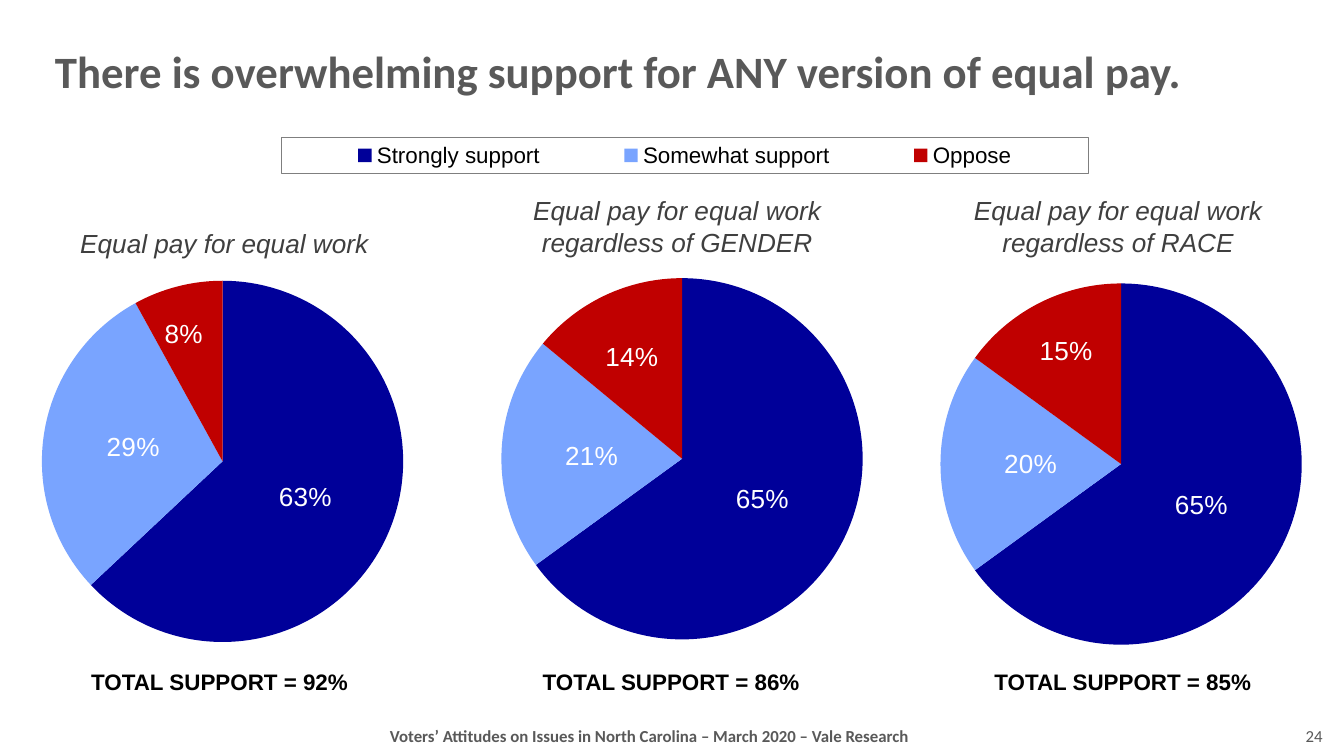
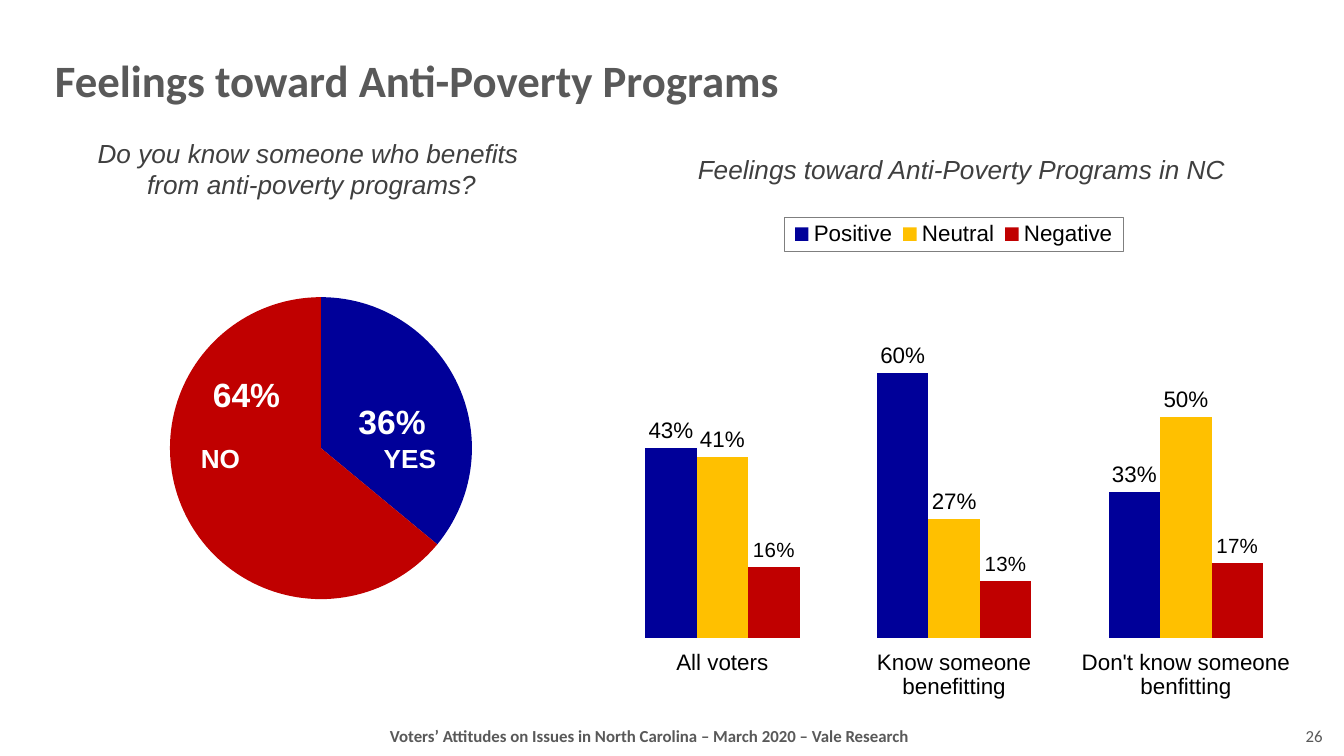
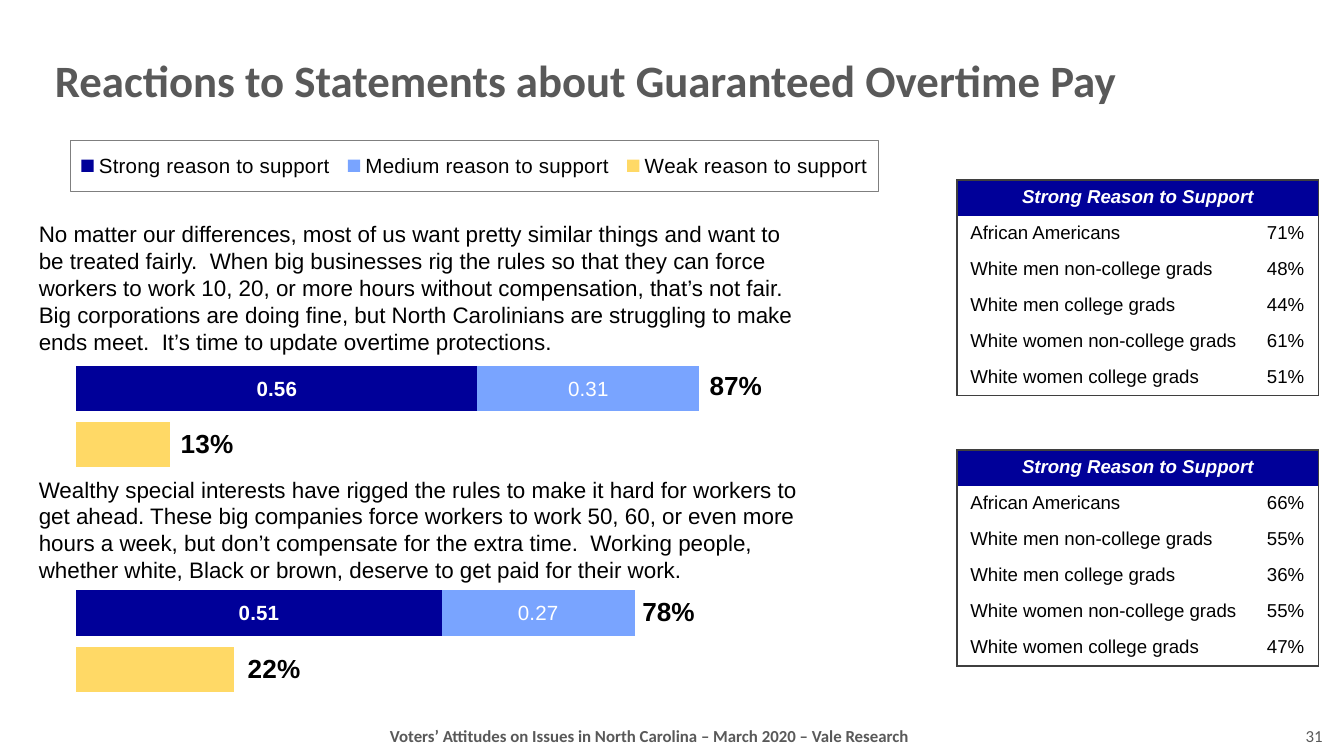
from copy import deepcopy
from dataclasses import dataclass, field

from lxml import etree
from pptx import Presentation
from pptx import util as u
from pptx.chart.data import CategoryChartData
from pptx.dml.color import RGBColor
from pptx.enum import chart as ch
from pptx.enum import text
from pptx.oxml import parse_xml
from pptx.oxml.ns import nsdecls, qn

NAVY = RGBColor(0x00, 0x00, 0x99)
SKY = RGBColor(0x79, 0xA4, 0xFF)
RED = RGBColor(0xC0, 0x00, 0x00)
GOLD = RGBColor(0xFF, 0xC0, 0x00)
PALE_GOLD = RGBColor(0xFF, 0xD9, 0x66)
GREY = RGBColor(0x59, 0x59, 0x59)
DARK = RGBColor(0x3F, 0x3F, 0x3F)
BLACK = RGBColor(0x00, 0x00, 0x00)
WHITE = RGBColor(0xFF, 0xFF, 0xFF)

CENTER, LEFT, RIGHT = text.PP_ALIGN.CENTER, text.PP_ALIGN.LEFT, text.PP_ALIGN.RIGHT
FOOTER = "Voters’ Attitudes on Issues in North Carolina – March 2020 – Vale Research"
PLAIN_TABLE = "{2D5ABB26-0587-4C30-8999-92F81FD0307C}"
Box = tuple[float, float, float, float]


@dataclass
class Pie:
    box: Box
    plot: Box  # fractions of the chart
    names: list[str]
    values: list[float | None]
    colors: list[RGBColor]
    size: int = 14
    bold: bool = False
    shifts: dict[int, tuple[float, float]] = field(default_factory=dict)


@dataclass
class Bars:
    name: str
    values: list[float | None]
    color: RGBColor
    size: int
    label_color: RGBColor = BLACK
    bold: bool = False
    fmt: str = "0%"


@dataclass
class Statement:
    words: str
    top: float
    height: float
    total: str
    total_at: tuple[float, float]
    table_top: float
    shares: list[str]


# Text
def style(font, size: float, color: RGBColor, bold=False, italic=False, name="Arial") -> None:
    font.name, font.size, font.bold, font.italic = name, u.Pt(size), bold, italic
    font.color.rgb = color


def fill_paragraph(p, words: str, align=LEFT, **fmt) -> None:
    p.text, p.alignment = words, align
    for r in p.runs:
        style(r.font, **fmt)
    for br in p._p.findall(qn("a:br")):
        br.insert(0, deepcopy(p.runs[0]._r.rPr))


def add_text(s, words: str, box: Box, wrap=True, middle=False, spacing=None, **fmt) -> None:
    tf = s.shapes.add_textbox(*map(u.Inches, box)).text_frame
    tf.word_wrap = wrap
    if middle:
        tf.vertical_anchor = text.MSO_ANCHOR.MIDDLE
    p = tf.paragraphs[0]
    fill_paragraph(p, words, **fmt)
    if spacing:
        p.line_spacing = spacing


def add_caption(s, words: str, box: Box) -> None:
    add_text(s, words, box, wrap=False, align=CENTER, size=14, color=DARK, italic=True)


def add_bold(s, words: str, box: Box, size=14, color=BLACK) -> None:
    add_text(s, words, box, wrap=False, align=CENTER, size=size, color=color, bold=True)


def new_slide(prs, title: str, number: int, title_top=0.16):
    s = prs.slides.add_slide(prs.slide_layouts[6])
    add_text(s, FOOTER, (1.84, 5.35, 5.98, 0.25), align=CENTER,
             size=9, color=GREY, bold=True, name="Calibri")
    add_text(s, title, (0.31, title_top, 8.89, 0.94), middle=True, spacing=0.8,
             size=24, color=GREY, bold=True, name="Calibri")
    add_text(s, str(number), (9.3, 5.35, 0.64, 0.25), align=RIGHT,
             size=9, color=GREY, name="Calibri")
    return s


# Charts
def set_layout(parent, index: int, x: float, y: float, size=None, inner=False) -> None:
    """Place a chart part; without a size, x and y shift it from its usual place."""
    for old in parent.findall(qn("c:layout")):
        parent.remove(old)
    layout = parse_xml(f"<c:layout {nsdecls('c')}><c:manualLayout/></c:layout>")
    values = {"layoutTarget": "inner"} if inner else {}
    if size:
        values |= {"xMode": "edge", "yMode": "edge"}
    values |= {"x": x, "y": y}
    if size:
        values |= {"w": size[0], "h": size[1]}
    for tag, value in values.items():
        etree.SubElement(layout[0], qn(f"c:{tag}")).set("val", str(value))
    parent.insert(index, layout)


def add_chart(s, kind, box: Box, plot: Box, data):
    chart = s.shapes.add_chart(kind, *map(u.Inches, box), data).chart
    chart.has_title = chart.has_legend = False
    style(chart.font, 18, BLACK)
    area = chart._chartSpace.xpath("c:chart/c:plotArea")[0]
    set_layout(area, 0, *plot[:2], size=plot[2:], inner=True)
    return chart


def add_legend(chart, box: Box, size: float) -> None:
    chart.has_legend = True
    legend = chart.legend
    legend.position = ch.XL_LEGEND_POSITION.TOP
    legend.include_in_layout = False
    style(legend.font, size, BLACK)
    set_layout(legend._element, 1, *box[:2], size=box[2:])
    legend._element.find(qn("c:overlay")).addnext(parse_xml(
        f'<c:spPr {nsdecls("c", "a")}><a:ln w="6350"><a:solidFill>'
        '<a:srgbClr val="7F7F7F"/></a:solidFill></a:ln></c:spPr>'))


def label_point(chart, ser: int, idx: int, shift=None, **fmt) -> None:
    label = chart.plots[0].series[ser].points[idx].data_label
    label.position = ch.XL_LABEL_POSITION.CENTER
    style(label.font, **fmt)
    if shift:
        item = chart._chartSpace.xpath(
            f".//c:ser[{ser + 1}]/c:dLbls/c:dLbl[c:idx/@val='{idx}']")[0]
        set_layout(item, 1, *shift)


def hide_leader_lines(chart) -> None:
    for lines in chart._chartSpace.xpath(".//c:showLeaderLines"):
        lines.set("val", "0")


def add_pie(s, pie: Pie):
    data = CategoryChartData(number_format="0%")
    data.categories = pie.names
    data.add_series("Series 1", pie.values)
    chart = add_chart(s, ch.XL_CHART_TYPE.PIE, pie.box, pie.plot, data)
    for i, color in enumerate(pie.colors):
        fill = chart.plots[0].series[0].points[i].format.fill
        fill.solid()
        fill.fore_color.rgb = color
        label_point(chart, 0, i, pie.shifts.get(i), size=pie.size, color=WHITE, bold=pie.bold)
    hide_leader_lines(chart)
    return chart


def add_bars(s, kind, box: Box, plot: Box, names: list[str], bars: list[Bars],
             gap: int, overlap: int, top: float, position):
    data = CategoryChartData()
    data.categories = names
    for b in bars:
        data.add_series(b.name, b.values, number_format=b.fmt)
    chart = add_chart(s, kind, box, plot, data)
    group = chart.plots[0]
    group.gap_width, group.overlap, group.vary_by_categories = gap, overlap, False
    axis = chart.value_axis
    axis.minimum_scale, axis.maximum_scale = 0, top
    axis.has_major_gridlines = axis.visible = False
    for series, b in zip(group.series, bars):
        series.format.fill.solid()
        series.format.fill.fore_color.rgb = b.color
        labels = series.data_labels
        labels.show_value, labels.position = True, position
        labels.number_format, labels.number_format_is_linked = b.fmt, False
        style(labels.font, b.size, b.label_color, b.bold)
    hide_leader_lines(chart)
    return chart


# Table
def set_borders(cell, sides: str) -> None:
    tc_pr = cell._tc.get_or_add_tcPr()
    for i, side in enumerate(c for c in "LRTB" if c in sides):
        tc_pr.insert(i, parse_xml(
            f'<a:ln{side} {nsdecls("a")} w="12700"><a:solidFill>'
            f'<a:srgbClr val="{DARK}"/></a:solidFill></a:ln{side}>'))


def add_reason_table(s, top: float, shares: list[str]) -> None:
    groups = ["African Americans", "White men non-college grads", "White men college grads",
              "White women non-college grads", "White women college grads"]
    rows = [("Strong Reason to Support", ""), *zip(groups, shares)]
    box = (7.12, top, 2.69, 1.6)
    table = s.shapes.add_table(len(rows), 2, *map(u.Inches, box)).table
    table.first_row = table.horz_banding = False
    table._tbl.tblPr.find(qn("a:tableStyleId")).text = PLAIN_TABLE
    table.columns[0].width, table.columns[1].width = u.Inches(2.2), u.Inches(0.49)
    for i, row in enumerate(rows):
        header = i == 0
        for j, words in enumerate(row):
            cell = table.cell(i, j)
            if header:
                cell.fill.solid()
                cell.fill.fore_color.rgb = NAVY
            else:
                cell.fill.background()
            fill_paragraph(cell.text_frame.paragraphs[0], words,
                           align=CENTER if header or j else LEFT, size=10,
                           color=WHITE if header else BLACK, bold=header, italic=header)
            edge = "T" if header else "B" if i == len(rows) - 1 else ""
            set_borders(cell, ("LR" if header else "LR"[j]) + edge)
    table.cell(0, 0).merge(table.cell(0, 1))


# Slides
def equal_pay(prs) -> None:
    s = new_slide(prs, "There is overwhelming support for ANY version of equal pay.", 24, 0.09)
    answers = ["Strongly support", "Somewhat support", "Oppose"]
    colors = [NAVY, SKY, RED]
    numbers = ["1", "2", "3"]
    middle = add_pie(s, Pie((1.76, 0.83, 6.67, 4.08), (0.295, 0.304, 0.404, 0.659), answers,
                            [0.65, 0.21, 0.14], colors, shifts={2: (-0.013, -0.036)}))
    add_legend(middle, (0.05, 0.047, 0.9, 0.066), 12)
    question = "Equal pay for equal work"
    add_caption(s, question, (0.49, 1.64, 2.36, 0.34))
    add_caption(s, question + "\nregardless of GENDER", (3.86, 1.4, 2.36, 0.57))
    add_caption(s, question + "\nregardless of RACE", (7.14, 1.4, 2.36, 0.57))
    add_pie(s, Pie((6.01, 0.8, 3.99, 4.08), (0.247, 0.321, 0.675, 0.659), numbers,
                   [0.65, 0.2, 0.15, None], colors, shifts={2: (-0.026, -0.058)}))
    add_pie(s, Pie((-0.01, 0.78, 3.99, 4.08), (0.08, 0.321, 0.675, 0.659), numbers,
                   [0.63, 0.29, 0.08, None], colors, shifts={2: (-0.03, -0.072)}))
    for i, total in enumerate((92, 86, 85)):
        add_bold(s, f"TOTAL SUPPORT = {total}%", (0.57 + 3.36 * i, 4.92, 2.13, 0.3), size=12)


def anti_poverty(prs) -> None:
    s = new_slide(prs, "Feelings toward Anti-Poverty Programs", 26)
    add_pie(s, Pie((0.64, 1.64, 3.5, 3.38), (0.178, 0.169, 0.643, 0.665), ["1", "2"],
                   [0.36, 0.64], [NAVY, RED], size=18, bold=True,
                   shifts={0: (0.006, 0.015), 1: (-0.013, -0.187)}))
    add_bold(s, "YES", (2.75, 3.24, 0.6, 0.34), color=WHITE)
    add_bold(s, "NO", (1.39, 3.24, 0.5, 0.34), color=WHITE)
    add_caption(s, "Do you know someone who benefits \nfrom anti-poverty programs?",
                (0.62, 0.97, 3.4, 0.57))
    feelings = add_bars(
        s, ch.XL_CHART_TYPE.COLUMN_CLUSTERED, (4.36, 1.54, 5.48, 3.78),
        (0.028, 0.24, 0.944, 0.609),
        ["All voters", "Know someone benefitting", "Don't know someone benfitting"],
        [Bars("Positive", [0.43, 0.6, 0.33], NAVY, 12),
         Bars("Neutral", [0.41, 0.27, 0.5], GOLD, 12),
         Bars("Negative", [0.16, 0.13, 0.17], RED, 11)],
        gap=150, overlap=0, top=0.7, position=ch.XL_LABEL_POSITION.OUTSIDE_END)
    style(feelings.category_axis.tick_labels.font, 12, BLACK)
    feelings.category_axis.format.line.fill.background()
    add_legend(feelings, (0.269, 0.02, 0.461, 0.067), 12)
    add_caption(s, "Feelings toward Anti-Poverty Programs in NC", (5.08, 1.09, 4.15, 0.34))


STATEMENTS = [
    Statement(
        "No matter our differences, most of us want pretty similar things and want to be treated "
        "fairly.  When big businesses rig the rules so that they can force workers to work 10, "
        "20, or more hours without compensation, that’s not fair.  Big corporations are doing "
        "fine, but North Carolinians are struggling to make ends meet.  It’s time to update "
        "overtime protections.",
        1.59, 1.11, "87%", (5.18, 2.7), 1.34, ["71%", "48%", "44%", "61%", "51%"]),
    Statement(
        "Wealthy special interests have rigged the rules to make it hard for workers to get "
        "ahead. These big companies force workers to work 50, 60, or even more hours a week, but "
        "don’t compensate for the extra time.  Working people, whether white, Black or brown, "
        "deserve to get paid for their work.",
        3.49, 0.91, "78%", (4.68, 4.38), 3.35, ["66%", "55%", "36%", "55%", "47%"]),
]


def overtime_pay(prs) -> None:
    s = new_slide(prs, "Reactions to Statements about Guaranteed Overtime Pay", 31)
    gap = [None] * 3
    reasons = add_bars(
        s, ch.XL_CHART_TYPE.BAR_STACKED, (0.52, 1.04, 6.47, 4.15), (0.007, 0.395, 0.824, 0.605),
        [str(n) for n in range(1, 7)],
        [Bars("Strong reason to support", [0.56, *gap, 0.51, None], NAVY, 11, WHITE, True,
              "General"),
         Bars("Medium reason to support", [0.31, *gap, 0.27, None], SKY, 11, WHITE,
              fmt="General"),
         Bars("Weak reason to support", [None, 0.13, *gap, 0.22], PALE_GOLD, 12, bold=True)],
        gap=24, overlap=100, top=1, position=ch.XL_LABEL_POSITION.CENTER)
    reasons.category_axis.reverse_order = True
    reasons.category_axis.visible = False
    add_legend(reasons, (0, 0, 0.93, 0.092), 11)
    for idx, shift in ((1, 0.097), (5, 0.137)):
        label_point(reasons, 2, idx, (shift, 0), size=14, color=BLACK, bold=True)
    for st in STATEMENTS:
        add_text(s, st.words, (0.19, st.top, 5.91, st.height), size=12, color=BLACK)
        add_bold(s, st.total, (*st.total_at, 0.59, 0.34))
        add_reason_table(s, st.table_top, st.shares)


def main() -> None:
    prs = Presentation()
    prs.slide_width = u.Inches(10)
    prs.slide_height = u.Inches(10 * 9 / 16)
    for build in (equal_pay, anti_poverty, overtime_pay):
        build(prs)
    prs.save("out.pptx")


if __name__ == "__main__":
    main()
